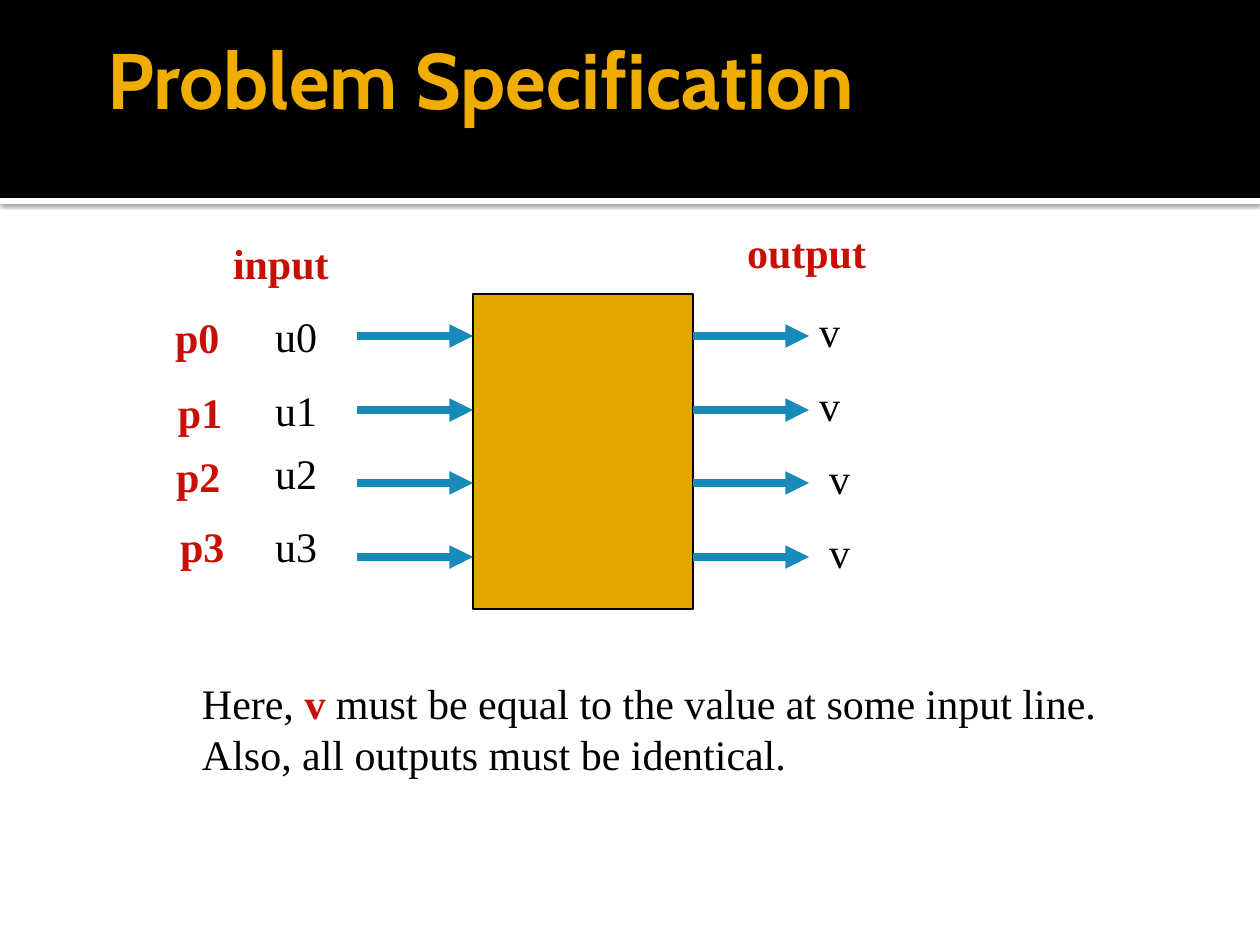
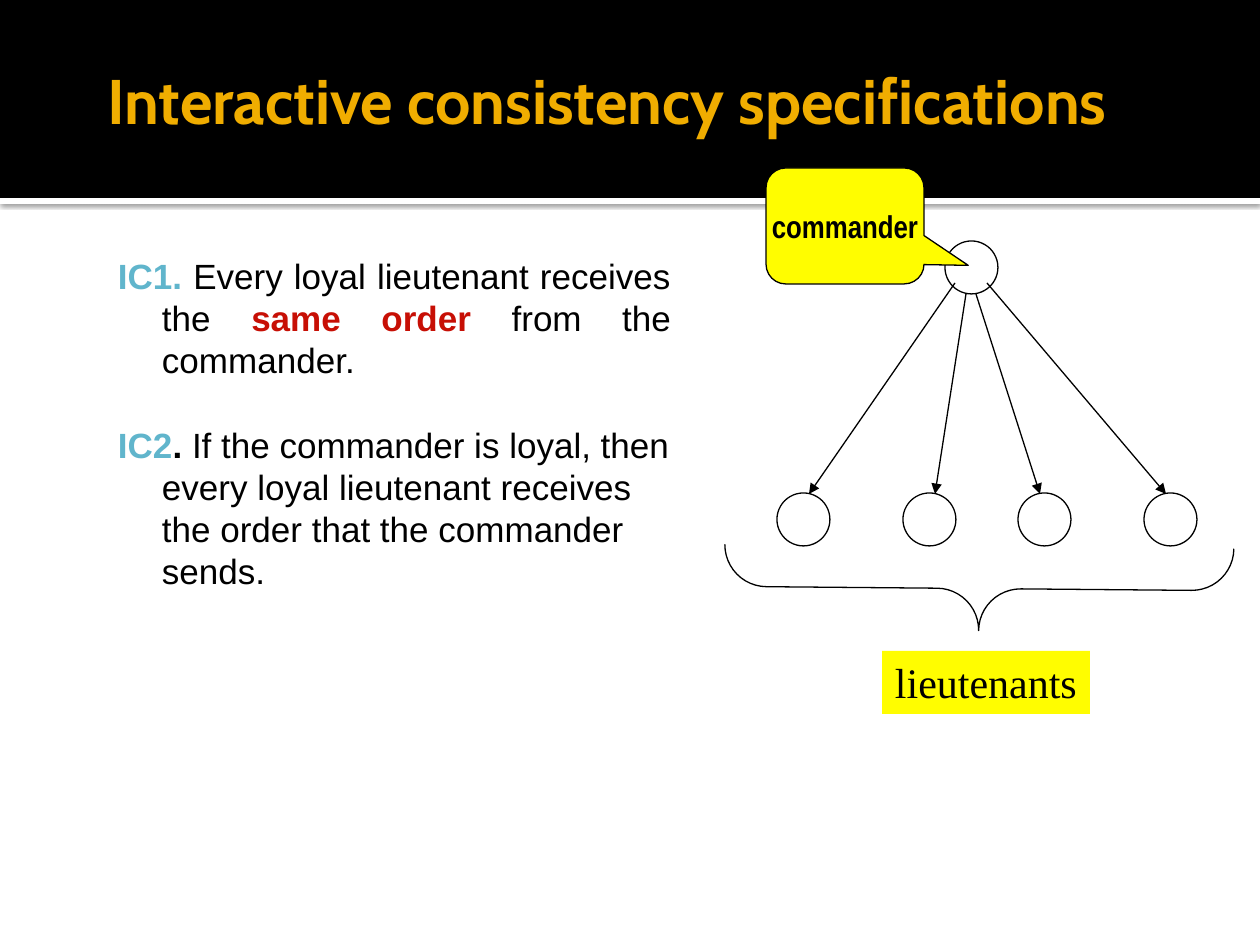
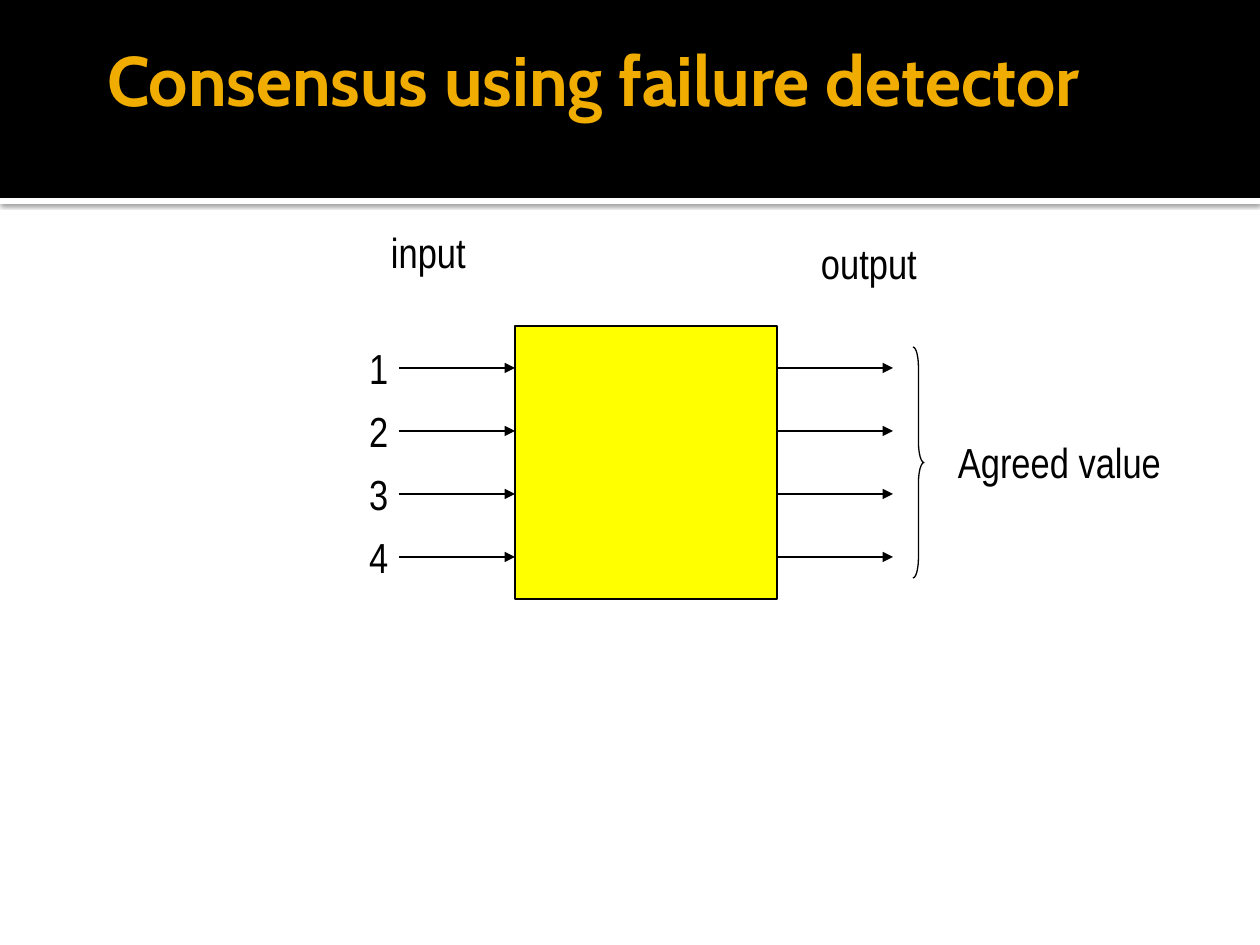
from lxml.etree import SubElement
from pptx import Presentation
from pptx.dml.color import RGBColor
from pptx.enum.shapes import MSO_CONNECTOR, MSO_SHAPE
from pptx.enum.text import MSO_ANCHOR, MSO_AUTO_SIZE, PP_ALIGN
from pptx.oxml.ns import qn
from pptx.util import Emu, Pt

BLACK, WHITE, GOLD, AMBER = "000000", "FFFFFF", "F0AD00", "E3A800"
RED, BLUE, AQUA = "C70F05", "168BBA", "60B5CC"
LEMON, YELLOW = "FFFD00", "FFFF00"
SERIF, SANS, SLIM, HEAD = "Times New Roman", "Arial", "Arial Narrow", "Cabin"


def px(num):
    """Turn pixels into EMU."""
    return Emu(round(num * 914400 / 126))


def tint(code):
    """Turn a hex string into a colour."""
    return RGBColor.from_string(code)


def write(frame, *paras, font=SERIF, size=24, color=BLACK, bold=False,
          align=PP_ALIGN.LEFT, anchor=MSO_ANCHOR.TOP, wrap=False, inset=(13, 6, 13, 6)):
    """Fill a text frame; a paragraph is a string or a list of (text, changes)."""
    frame.auto_size = MSO_AUTO_SIZE.NONE
    frame.word_wrap = wrap
    frame.vertical_anchor = anchor
    frame.margin_left, frame.margin_top, frame.margin_right, frame.margin_bottom = map(px, inset)
    for i, parts in enumerate(paras):
        para = frame.paragraphs[0] if i == 0 else frame.add_paragraph()
        para.alignment = align
        for words, change in [(parts, {})] if isinstance(parts, str) else parts:
            run = para.add_run()
            run.text = words
            run.font.name, run.font.size = font, Pt(size)
            run.font.bold = change.get("bold", bold)
            run.font.color.rgb = tint(change.get("color", color))


def label(slide, x, y, wide, *paras, high=63, **style):
    """Add a text box."""
    box = slide.shapes.add_textbox(px(x), px(y), px(wide), px(high))
    write(box.text_frame, *paras, **style)
    return box


def shape(slide, kind, x, y, wide, high, fill=None, line=BLACK, adjust=()):
    """Add a preset shape with a flat fill and a thin outline."""
    item = slide.shapes.add_shape(kind, px(x), px(y), px(wide), px(high))
    item.shadow.inherit = False
    if fill:
        item.fill.solid()
        item.fill.fore_color.rgb = tint(fill)
    else:
        item.fill.background()
    if line:
        item.line.color.rgb = tint(line)
        item.line.width = Pt(0.75)
    else:
        item.line.fill.background()
    for i, value in enumerate(adjust):
        item.adjustments[i] = value
    return item


def arrow(slide, start, end, color=BLACK, width=0.75):
    """Add a straight arrow."""
    item = slide.shapes.add_connector(MSO_CONNECTOR.STRAIGHT, *map(px, start + end))
    item.line.color.rgb = tint(color)
    item.line.width = Pt(width)
    SubElement(item.line._get_or_add_ln(), qn("a:tailEnd"), type="triangle")
    SubElement(item._element.spPr, qn("a:effectLst"))


def flow(slide, rows, left, right, **style):
    """Draw a row of arrows into and out of a box."""
    for y in rows:
        for x in (left, right):
            arrow(slide, (x, y), (x + 116, y), **style)


def dress(slide, layout):
    """Move the shared header bands to the layout."""
    rule = shape(slide, MSO_SHAPE.RECTANGLE, 0, 198, 1260, 6, WHITE, None)
    band = shape(slide, MSO_SHAPE.RECTANGLE, 0, 0, 1260, 198, BLACK, None)
    glow = SubElement(rule._element.spPr.find(qn("a:effectLst")), qn("a:outerShdw"),
                      blurRad=str(Pt(2.5)), dist=str(Pt(0.8)), dir="5400000")
    shade = SubElement(glow, qn("a:srgbClr"), val=BLACK)
    SubElement(shade, qn("a:alpha"), val="60000")
    for i, item in enumerate((rule, band)):
        item._element.nvSpPr.cNvPr.set("id", str(20 + i))
        layout.shapes._spTree.insert(2 + i, item._element)


def start(deck, words, size, top=0):
    """Add a slide with its title."""
    slide = deck.slides.add_slide(deck.slide_layouts[5])
    title = slide.shapes.title
    title.left, title.top, title.width, title.height = map(px, (94, top, 1071, 157))
    write(title.text_frame, words, font=HEAD, size=size, color=GOLD, bold=True,
          anchor=MSO_ANCHOR.MIDDLE, wrap=True, inset=(13, 6, 6, 6))
    return slide


def problem(deck):
    """Build the slide on the problem."""
    slide = start(deck, "Problem Specification", 45)
    dress(slide, deck.slide_layouts[5])
    strong = {"color": RED, "bold": True}
    shape(slide, MSO_SHAPE.RECTANGLE, 473, 294, 220, 315, AMBER)
    steps = [(147 * i + 1) // 2 for i in range(4)]
    flow(slide, [336 + step for step in steps], 357, 693, color=BLUE, width=4.5)
    for i, y in enumerate((305, 379, 442, 515)):
        label(slide, 262, y, 67, f"u{i}")
    for x, step in zip((806, 806, 816, 816), steps):
        label(slide, x, 300 + step, 47, "v")
    for i, (x, y) in enumerate(((162, 306), (165, 381), (163, 445), (167, 515))):
        label(slide, x, y, 69, f"p{i}", **strong)
    label(slide, 220, 232, 121, "input", **strong)
    label(slide, 734, 221, 145, "output", **strong)
    label(slide, 189, 672, 919,
          [("Here, ", {}), ("v", strong),
           (" must be equal to the value at some input line.", {})],
          "Also, all outputs must be identical.", high=113)


def orders(deck):
    """Build the slide on commander and lieutenants."""
    slide = start(deck, "Interactive consistency specifications", 36, 21)
    mark = {"color": AQUA, "bold": True}
    body = label(
        slide, 94, 242, 590,
        [("IC1.", mark), (" Every loyal lieutenant receives the ", {}),
         ("same order", {"color": RED, "bold": True}), (" from the commander.", {})],
        [("IC2", mark), (". ", {"bold": True}),
         ("If the commander is loyal, then every loyal lieutenant receives "
          "the order that the commander sends.", {})],
        high=567, font=SANS, size=20, wrap=True, inset=(8, 13, 13, 6))
    first, second = body.text_frame.paragraphs
    first.alignment = PP_ALIGN.JUSTIFY
    second.space_before = Pt(24)
    for para in (first, second):
        para.line_spacing = Pt(24)
        props = para._p.get_or_add_pPr()
        props.set("marL", str(px(60)))
        props.set("indent", str(px(-44)))
    shape(slide, MSO_SHAPE.OVAL, 945, 241, 53, 53)
    for x, tip, root in ((777, 32, (955, 283)), (903, 32, (966, 294)),
                         (1018, 22, (976, 294)), (1144, 22, (987, 283))):
        shape(slide, MSO_SHAPE.OVAL, x, 493, 53, 53)
        arrow(slide, root, (x + tip, 494))
    bubble = shape(slide, MSO_SHAPE.ROUNDED_RECTANGULAR_CALLOUT, 766, 168, 158, 116,
                   LEMON, adjust=(0.78, 0.34, 0.17))
    write(bubble.text_frame, "commander", font=SLIM, size=18, bold=True,
          align=PP_ALIGN.CENTER, anchor=MSO_ANCHOR.MIDDLE)
    brace = shape(slide, MSO_SHAPE.LEFT_BRACE, 937, 334, 84, 509, adjust=(0.5, 0.5))
    brace.rotation = 270.5
    tag = shape(slide, MSO_SHAPE.RECTANGLE, 882, 651, 208, 63, LEMON, None)
    write(tag.text_frame, "lieutenants")


def detector(deck):
    """Build the slide on the failure detector."""
    slide = start(deck, "Consensus using failure detector", 40)
    shape(slide, MSO_SHAPE.RECTANGLE, 515, 326, 262, 273, YELLOW)
    rows = range(368, 558, 63)
    flow(slide, rows, 399, 777)
    for i, y in enumerate(rows):
        label(slide, 356, y - 31, 44, str(i + 1), font=SLIM)
    for x, y, wide, words in ((378, 221, 99, "input"), (808, 232, 121, "output"),
                              (945, 431, 227, "Agreed value")):
        label(slide, x, y, wide, words, font=SLIM)
    shape(slide, MSO_SHAPE.RIGHT_BRACE, 913, 347, 11, 231, adjust=(1.83, 0.5))


def main():
    """Build and save the deck."""
    deck = Presentation()
    deck.slide_width, deck.slide_height = px(1260), px(945)
    problem(deck)
    orders(deck)
    detector(deck)
    deck.save("out.pptx")


if __name__ == "__main__":
    main()
